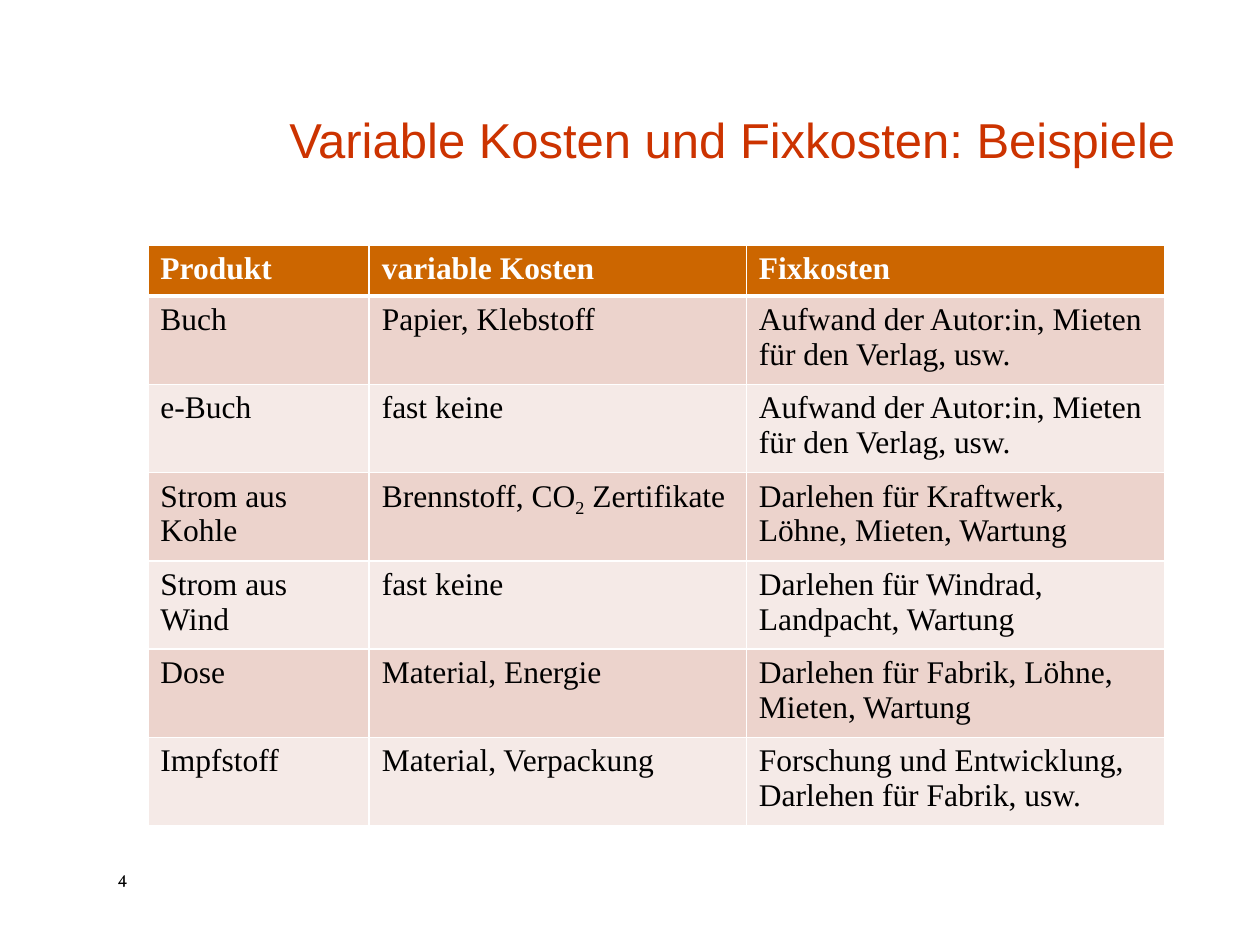
from dataclasses import dataclass

import pptx
import pptx.dml.color
import pptx.enum.text
import pptx.oxml
import pptx.oxml.ns
import pptx.util

Pt = pptx.util.Pt
RGB = pptx.dml.color.RGBColor.from_string
ALIGN = pptx.enum.text.PP_ALIGN
ANCHOR = pptx.enum.text.MSO_ANCHOR


@dataclass(frozen=True)
class Theme:
    title: str = "CC3300"
    header: str = "CC6600"
    bands: tuple = ("ECD3CC", "F5EAE7")
    text: str = "000000"
    light: str = "FFFFFF"
    title_size: float = 28
    table_size: float = 18
    number_size: float = 10
    thin: float = 0.96
    thick: float = 3


THEME = Theme()

HEADER = ("Produkt", "variable Kosten", "Fixkosten")
EXAMPLES = (
    ("Buch", "Papier, Klebstoff", "Aufwand der Autor:in, Mieten für den Verlag, usw."),
    ("e-Buch", "fast keine", "Aufwand der Autor:in, Mieten für den Verlag, usw."),
    ("Strom aus Kohle", ("Brennstoff, CO", "2", " Zertifikate"),
     "Darlehen für Kraftwerk, Löhne, Mieten, Wartung"),
    ("Strom aus Wind", "fast keine", "Darlehen für Windrad, Landpacht, Wartung"),
    ("Dose", "Material, Energie", "Darlehen für Fabrik, Löhne, Mieten, Wartung"),
    ("Impfstoff", "Material, Verpackung", "Forschung und Entwicklung, Darlehen für Fabrik, usw."),
)
COLUMN_WIDTHS = (126.5, 215.5, 239)
HEADER_HEIGHT, ROW_HEIGHT = 29.2, 50.4


def set_values(obj, values):
    for name, value in values.items():
        setattr(obj, name, value)


def add_runs(p, content, color, **font):
    parts = (content,) if isinstance(content, str) else content
    for i, text in enumerate(parts):
        r = p.add_run()
        r.text = text
        set_values(r.font, font)
        r.font.color.rgb = RGB(color)
        if i % 2:
            r._r.get_or_add_rPr().set("baseline", "-25000")


def add_text(s, box, text, color, frame, paragraph, **font):
    tf = s.shapes.add_textbox(*map(Pt, box)).text_frame
    set_values(tf, {"word_wrap": True, **frame})
    p = tf.paragraphs[0]
    set_values(p, paragraph)
    add_runs(p, text, color, **font)


def add_border(cell, side, width):
    ln = pptx.oxml.parse_xml(
        f'<a:{side} {pptx.oxml.ns.nsdecls("a")} w="{int(Pt(width))}">'
        f'<a:solidFill><a:srgbClr val="{THEME.light}"/></a:solidFill></a:{side}>')
    cell._tc.get_or_add_tcPr().append(ln)


def fill_cell(cell, content, row):
    is_header = row == 0
    add_runs(cell.text_frame.paragraphs[0], content,
             THEME.light if is_header else THEME.text,
             name="Times New Roman", size=Pt(THEME.table_size), bold=is_header)
    for side in ("lnL", "lnR", "lnT", "lnB"):
        heavy = (row, side) in ((0, "lnB"), (1, "lnT"))
        add_border(cell, side, THEME.thick if heavy else THEME.thin)
    cell.fill.solid()
    cell.fill.fore_color.rgb = RGB(THEME.header if is_header else THEME.bands[(row - 1) % 2])


def add_cost_table(s, left, top):
    rows = (HEADER, *EXAMPLES)
    heights = [HEADER_HEIGHT] + [ROW_HEIGHT] * len(EXAMPLES)
    size = (sum(COLUMN_WIDTHS), sum(heights))
    table = s.shapes.add_table(len(rows), len(HEADER),
                               *map(Pt, (left, top, *size))).table
    for column, width in zip(table.columns, COLUMN_WIDTHS):
        column.width = Pt(width)
    for i, (contents, height) in enumerate(zip(rows, heights)):
        table.rows[i].height = Pt(height)
        for j, content in enumerate(contents):
            fill_cell(table.cell(i, j), content, i)


def main():
    prs = pptx.Presentation()
    set_values(prs, {"slide_width": Pt(720), "slide_height": Pt(540)})
    s = prs.slides.add_slide(prs.slide_layouts[6])
    add_text(s, (60, 492, 48, 19.5), "4", THEME.text, {}, {},
             name="Vollkorn", size=Pt(THEME.number_size))
    add_text(s, (150.5, 30, 528, 70), "Variable Kosten und Fixkosten: Beispiele",
             THEME.title, {"vertical_anchor": ANCHOR.BOTTOM}, {"alignment": ALIGN.RIGHT},
             name="Arial", size=Pt(THEME.title_size))
    add_cost_table(s, 84.5, 140)
    prs.save("out.pptx")


if __name__ == "__main__":
    main()
